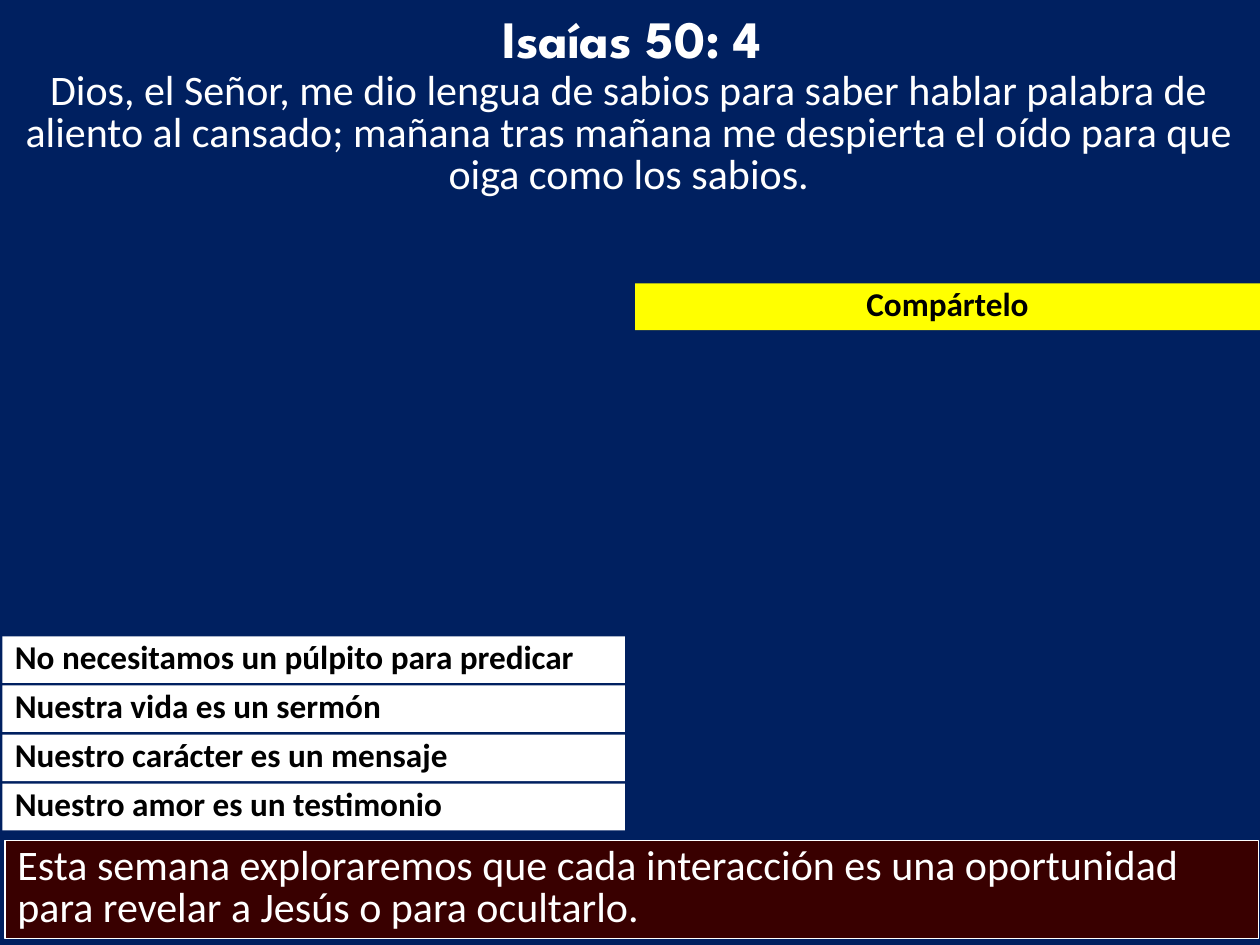
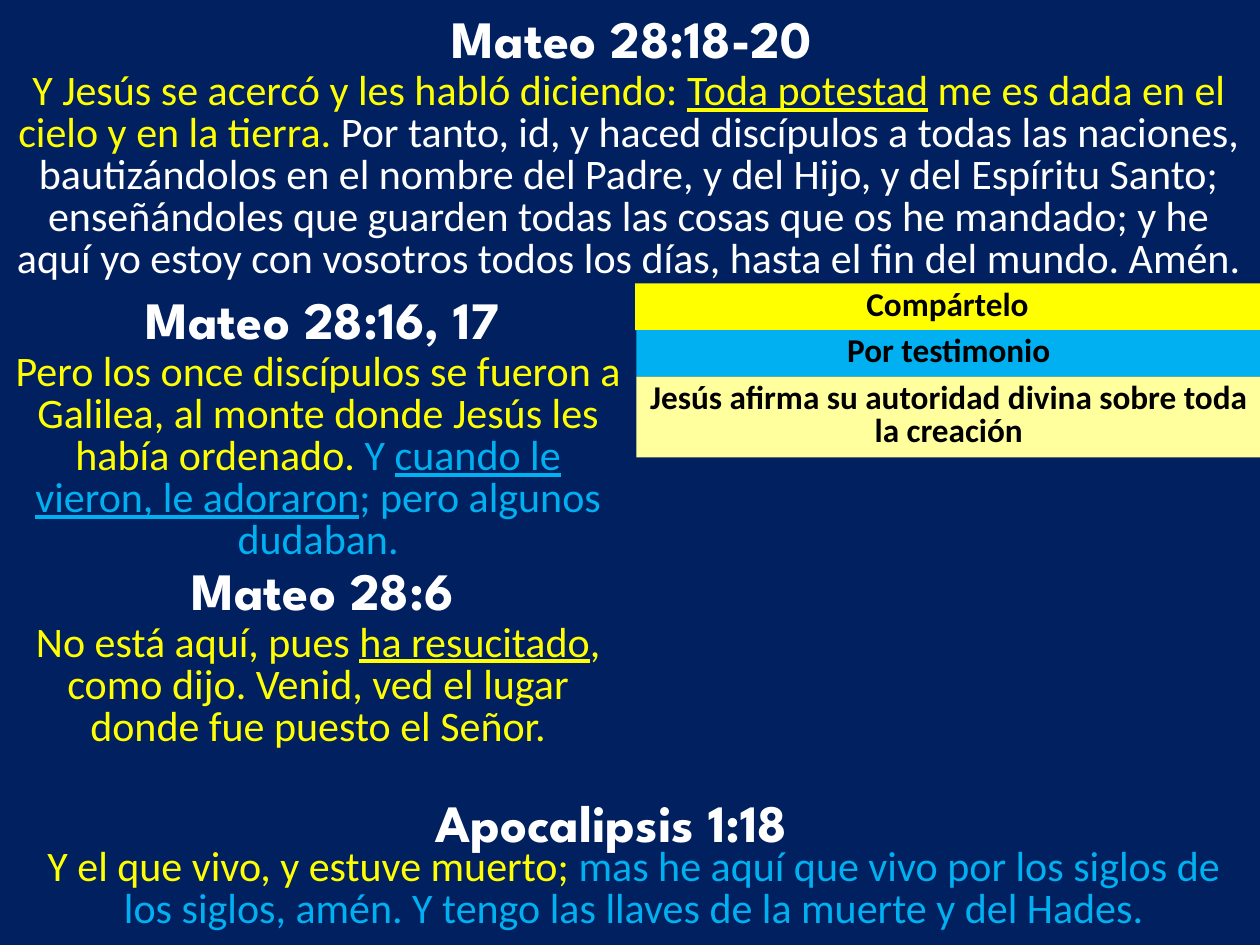
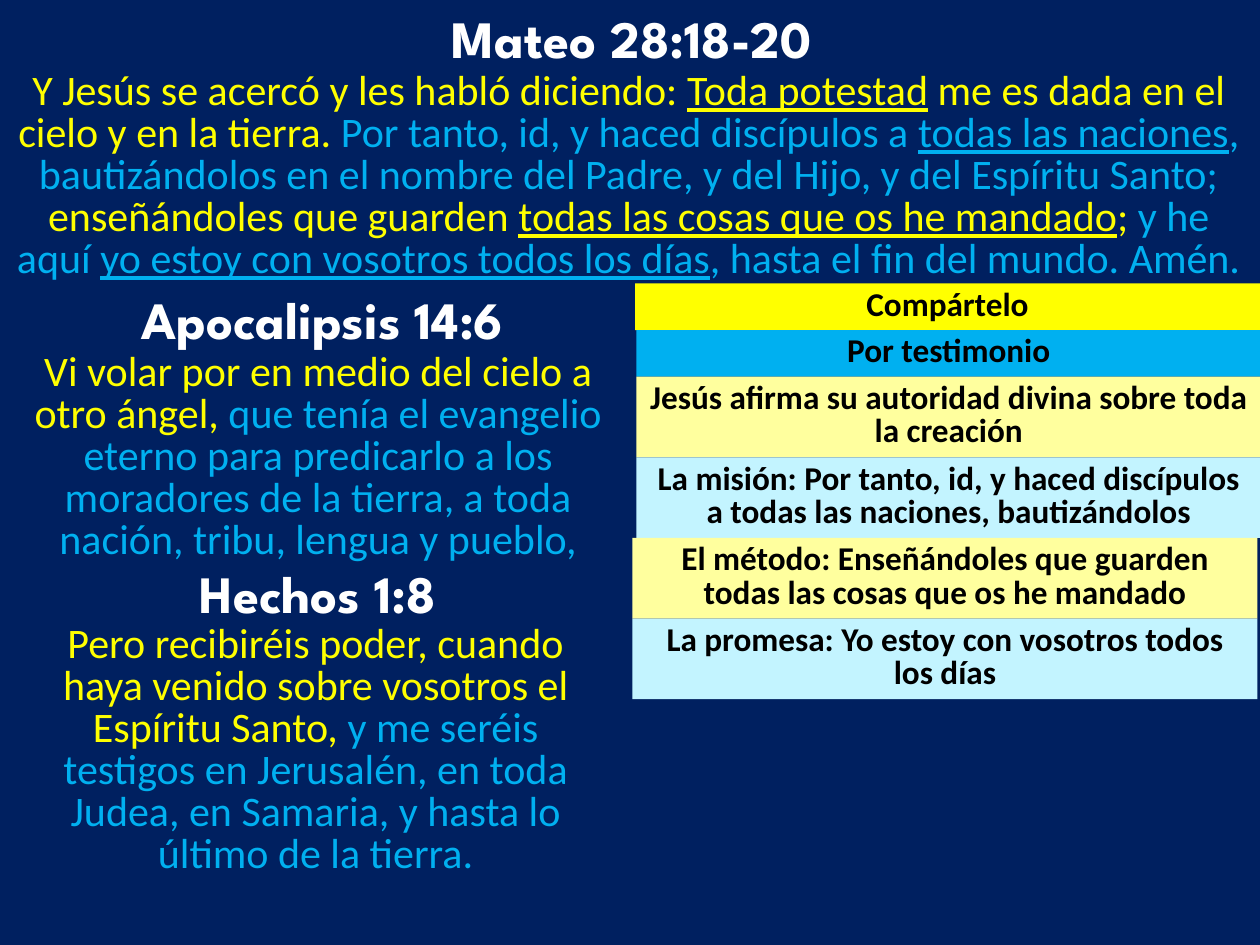
from dataclasses import dataclass
from typing import Optional

from pptx import Presentation
from pptx.dml.color import RGBColor
from pptx.enum.shapes import MSO_SHAPE as Preset
from pptx.enum.text import MSO_ANCHOR as Anchor, MSO_AUTO_SIZE as AutoSize, PP_ALIGN as Align
from pptx.util import Emu, Pt

EMU_PER_PX = 9144  # 100 px to the inch
COLORS = {
    "navy": "002060",
    "maroon": "390000",
    "white": "FFFFFF",
    "black": "000000",
    "yellow": "FFFF00",
    "blue": "00B0F0",
    "pale_yellow": "FFFF9E",
    "pale_blue": "C3F4FF",
}
HEADING_FONT, BODY_FONT = "League Spartan", "Calibri"
HEADING_SIZE, VERSE_SIZE, BAR_SIZE = 30, 24, 19
HEADING_HEIGHT, BAR_HEIGHT, TALL_BAR_HEIGHT = 61, 37, 64
HEADING_INSET = 20
BAR_WIDTH, BARS_TOP = 496, 225
STATEMENT_WIDTH, STATEMENTS_TOP, STATEMENT_STEP = 494, 505, 39


@dataclass(frozen=True)
class Area:
    left: int
    top: int
    width: int
    height: int


@dataclass(frozen=True)
class Span:
    text: str
    color: str
    underline: bool = False


@dataclass(frozen=True)
class Passage:
    heading: str
    heading_area: Area
    verse: list[Span]
    verse_area: Area


@dataclass(frozen=True)
class Bar:
    text: str
    fill: str
    left: int = 505
    height: int = TALL_BAR_HEIGHT


def px(length: int) -> Emu:
    return Emu(length * EMU_PER_PX)


def rgb(name: str) -> RGBColor:
    return RGBColor.from_string(COLORS[name])


def frame_of(area: Area) -> tuple[Emu, Emu, Emu, Emu]:
    return px(area.left), px(area.top), px(area.width), px(area.height)


def write(box, spans: list[Span], size: int, font: str = BODY_FONT, bold: bool = False,
          align: Align = Align.CENTER, spacing: Optional[int] = None) -> None:
    """Fill the box with one paragraph made of the spans."""
    frame = box.text_frame
    frame.word_wrap = True
    frame.auto_size = AutoSize.SHAPE_TO_FIT_TEXT
    frame.vertical_anchor = Anchor.TOP
    para = frame.paragraphs[0]
    para.alignment = align
    if spacing:
        para.line_spacing = Pt(spacing)
    for span in spans:
        run = para.add_run()
        run.text = span.text
        run.font.name = font
        run.font.size = Pt(size)
        run.font.bold = bold
        run.font.underline = span.underline
        run.font.color.rgb = rgb(span.color)


def add_passage(page, passage: Passage) -> None:
    heading = page.shapes.add_textbox(*frame_of(passage.heading_area))
    heading.text_frame.margin_left = px(HEADING_INSET)
    write(heading, [Span(passage.heading, "white")], HEADING_SIZE, HEADING_FONT, bold=True)
    verse = page.shapes.add_textbox(*frame_of(passage.verse_area))
    write(verse, passage.verse, VERSE_SIZE, spacing=VERSE_SIZE)


def add_panel(page, area: Area, fill: str, line: Optional[str] = None):
    panel = page.shapes.add_shape(Preset.RECTANGLE, *frame_of(area))
    panel.shadow.inherit = False
    panel.fill.solid()
    panel.fill.fore_color.rgb = rgb(fill)
    if line:
        panel.line.color.rgb = rgb(line)
        panel.line.width = Pt(0.75)
    else:
        panel.line.fill.background()
    return panel


def add_bars(page, bars: list[Bar]) -> None:
    """Stack the bars down the right half of the page."""
    top = BARS_TOP
    for bar in bars:
        panel = add_panel(page, Area(bar.left, top, BAR_WIDTH, bar.height), bar.fill)
        write(panel, [Span(bar.text, "black")], BAR_SIZE, bold=True, spacing=BAR_SIZE)
        top += bar.height


def add_statements(page, statements: list[str]) -> None:
    for index, statement in enumerate(statements):
        top = STATEMENTS_TOP + index * STATEMENT_STEP
        panel = add_panel(page, Area(2, top, STATEMENT_WIDTH, BAR_HEIGHT), "white")
        write(panel, [Span(statement, "black")], BAR_SIZE, bold=True,
              align=Align.LEFT, spacing=BAR_SIZE)


def add_summary(page, text: str) -> None:
    panel = add_panel(page, Area(4, 667, 995, 78), "maroon", "white")
    write(panel, [Span(text, "white")], VERSE_SIZE, align=Align.LEFT, spacing=VERSE_SIZE)


def top_passage(heading: str, verse: list[Span], height: int) -> Passage:
    return Passage(heading, Area(264, 0, 465, HEADING_HEIGHT), verse, Area(0, 52, 998, height))


def left_passage(heading: str, verse: list[Span], top: int, verse_area: Area,
                 left: int = 20) -> Passage:
    return Passage(heading, Area(left, top, 462, HEADING_HEIGHT), verse, verse_area)


SHARE_BAR = Bar("Compártelo", "yellow", 504, BAR_HEIGHT)
TESTIMONY_BARS = [
    SHARE_BAR,
    Bar("Por testimonio", "blue", height=BAR_HEIGHT),
    Bar("Jesús afirma su autoridad divina sobre toda la creación", "pale_yellow"),
]
MISSION_BARS = [
    Bar("La misión: Por tanto, id, y haced discípulos a todas las naciones, bautizándolos",
        "pale_blue"),
    Bar("El método: Enseñándoles que guarden todas las cosas que os he mandado",
        "pale_yellow", 502),
    Bar("La promesa: Yo estoy con vosotros todos los días", "pale_blue", 502),
]
STATEMENTS = [
    "No necesitamos un púlpito para predicar",
    "Nuestra vida es un sermón",
    "Nuestro carácter es un mensaje",
    "Nuestro amor es un testimonio",
]
SUMMARY = ("Esta semana exploraremos que cada interacción es una oportunidad "
           "para revelar a Jesús o para ocultarlo.")

ISAIAH = top_passage("Isaías 50: 4", [
    Span("Dios, el Señor, me dio lengua de sabios para saber hablar palabra de aliento al "
         "cansado; mañana tras mañana me despierta el oído para que oiga como los sabios.",
         "white"),
], 112)

COMMISSION_OPENING = [
    Span("Y Jesús se acercó y les habló diciendo: ", "yellow"),
    Span("Toda potestad", "yellow", True),
    Span(" me es dada en el cielo y en la tierra. ", "yellow"),
]
COMMISSION_PLAIN = [
    Span("Por tanto, id, y haced discípulos a todas las naciones, bautizándolos en el nombre "
         "del Padre, y del Hijo, y del Espíritu Santo; enseñándoles que guarden todas las "
         "cosas que os he mandado; y he aquí yo estoy con vosotros todos los días, hasta el "
         "fin del mundo. Amén.", "white"),
]
COMMISSION_MARKED = [
    Span("Por tanto, id, y haced discípulos a ", "blue"),
    Span("todas las naciones", "blue", True),
    Span(", bautizándolos en el nombre del Padre, y del Hijo, y del Espíritu Santo; ", "blue"),
    Span("enseñándoles que guarden ", "yellow"),
    Span("todas las cosas que os he mandado", "yellow", True),
    Span("; ", "yellow"),
    Span("y he aquí ", "blue"),
    Span("yo estoy con vosotros todos los días", "blue", True),
    Span(", hasta el fin del mundo. Amén.", "blue"),
]


def commission(ending: list[Span]) -> Passage:
    return top_passage("Mateo 28:18-20", COMMISSION_OPENING + ending, 179)


AUTHORITY_PASSAGES = [
    commission(COMMISSION_PLAIN),
    left_passage("Mateo 28:16, 17", [
        Span("Pero los once discípulos se fueron a Galilea, al monte donde Jesús les había "
             "ordenado. ", "yellow"),
        Span("Y ", "blue"),
        Span("cuando le vieron, le adoraron", "blue", True),
        Span("; pero algunos dudaban.", "blue"),
    ], 223, Area(0, 275, 505, 179)),
    left_passage("Mateo 28:6", [
        Span("No está aquí, pues ", "yellow"),
        Span("ha resucitado", "yellow", True),
        Span(", como dijo. Venid, ved el lugar donde fue puesto el Señor.", "yellow"),
    ], 438, Area(0, 490, 505, 112)),
    left_passage("Apocalipsis 1:18", [
        Span("Y el que vivo, y estuve muerto; ", "yellow"),
        Span("mas he aquí que vivo por los siglos de los siglos, amén. Y tengo las llaves de "
             "la muerte y del Hades.", "blue"),
    ], 622, Area(6, 668, 994, 78), left=249),
]
MISSION_PASSAGES = [
    commission(COMMISSION_MARKED),
    left_passage("Apocalipsis 14:6", [
        Span("Vi volar por en medio del cielo a otro ángel, ", "yellow"),
        Span("que tenía el evangelio eterno para predicarlo a los moradores de la tierra, a "
             "toda nación, tribu, lengua y pueblo,", "blue"),
    ], 223, Area(0, 275, 505, 179)),
    left_passage("Hechos 1:8", [
        Span("Pero recibiréis poder, cuando haya venido sobre vosotros el Espíritu Santo, ",
             "yellow"),
        Span("y me seréis testigos en Jerusalén, en toda Judea, en Samaria, y hasta lo último "
             "de la tierra.", "blue"),
    ], 440, Area(20, 491, 461, 213), left=16),
]


def add_page(deck, passages: list[Passage], bars: list[Bar]):
    page = deck.slides.add_slide(deck.slide_layouts[6])
    page.background.fill.solid()
    page.background.fill.fore_color.rgb = rgb("navy")
    for passage in passages:
        add_passage(page, passage)
    add_bars(page, bars)
    return page


def main() -> None:
    deck = Presentation()
    deck.slide_width, deck.slide_height = px(1000), px(750)
    opening = add_page(deck, [ISAIAH], [SHARE_BAR])
    add_statements(opening, STATEMENTS)
    add_summary(opening, SUMMARY)
    add_page(deck, AUTHORITY_PASSAGES, TESTIMONY_BARS)
    add_page(deck, MISSION_PASSAGES, TESTIMONY_BARS + MISSION_BARS)
    deck.save("out.pptx")


if __name__ == "__main__":
    main()
